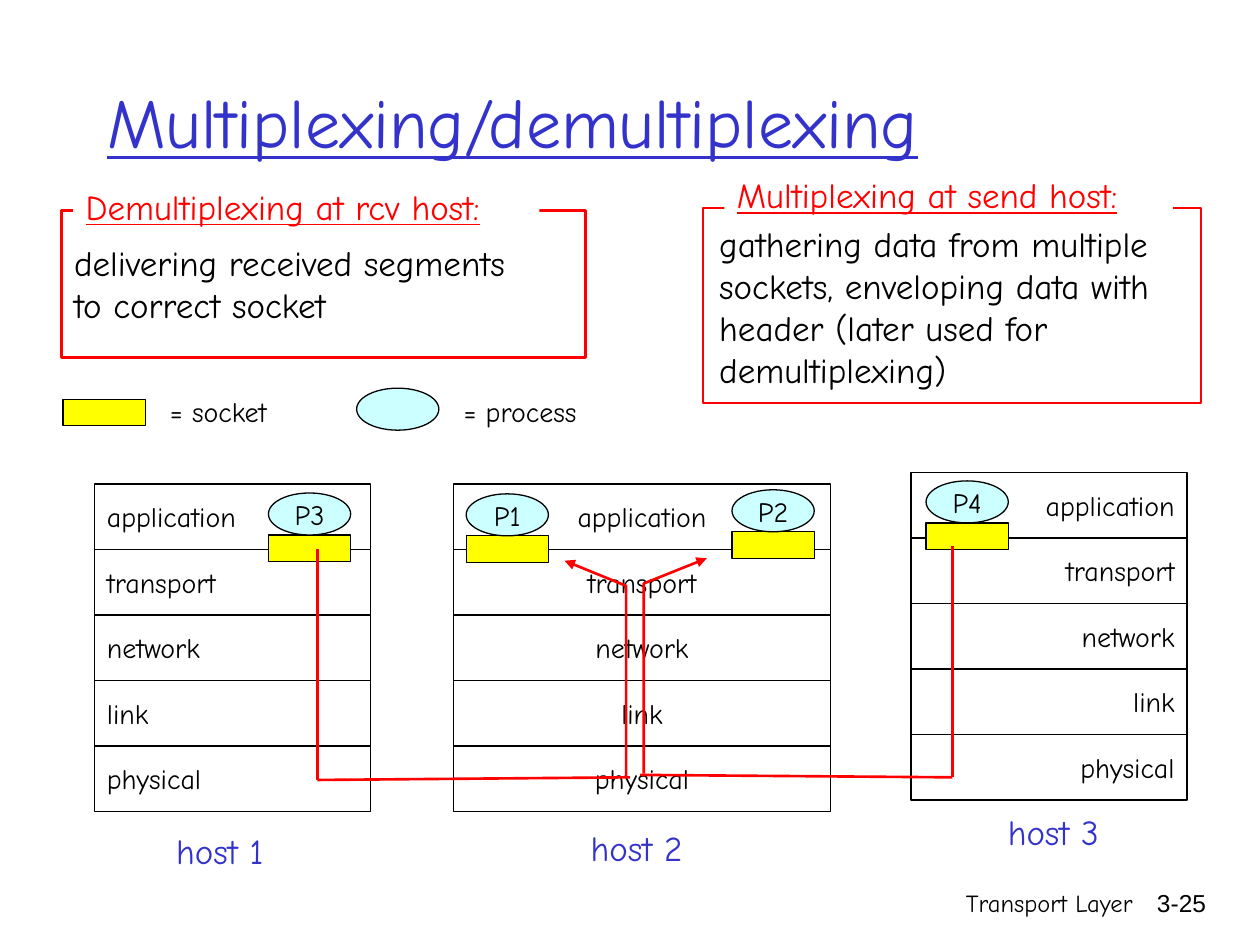
"""Build the multiplexing/demultiplexing slide with its three protocol stacks."""
from lxml import etree
from pptx import Presentation
from pptx.dml.color import RGBColor
from pptx.enum.shapes import MSO_CONNECTOR, MSO_SHAPE
from pptx.enum.text import MSO_ANCHOR, PP_ALIGN
from pptx.oxml.ns import qn
from pptx.util import Pt

RECT, OVAL, STRAIGHT = MSO_SHAPE.RECTANGLE, MSO_SHAPE.OVAL, MSO_CONNECTOR.STRAIGHT
LEFT, CENTER, RIGHT = PP_ALIGN.LEFT, PP_ALIGN.CENTER, PP_ALIGN.RIGHT
TOP, MIDDLE = MSO_ANCHOR.TOP, MSO_ANCHOR.MIDDLE

THEME = {
    "font": "Comic Neue", "number_font": "Arial",
    "ink": "000000", "paper": "FFFFFF", "blue": "3333CC", "red": "FF0000",
    "socket": "FFFF00", "process": "CCFFFF",
    "title": 40, "body": 20, "label": 16, "footer": 14,
    "thin": 0.75, "thick": 1.5,
}

TITLE = ("Multiplexing/demultiplexing", (54, 24, 612, 90))
LAYERS = ["application", "transport", "network", "link", "physical"]
ROW_HEIGHT = 37.44
HOSTS = [
    {"left": 54, "top": 276.5, "width": 157.7, "align": LEFT,
     "caption": ("host 1", (93.6, 470.2, 70.6, 31))},
    {"left": 520.6, "top": 270, "width": 157.7, "align": RIGHT,
     "caption": ("host 3", (568.8, 459.4, 74.2, 31))},
    {"left": 259.2, "top": 276.5, "width": 215.3, "align": CENTER,
     "caption": ("host 2", (330.5, 468.7, 74.2, 31))},
]
SOCKET_SIZE, PROCESS_SIZE = (47, 15.1), (47, 24)
PROCESSES = [("P2", 418.3, 303.9), ("P3", 153.4, 305.7),
             ("P4", 529.2, 298.8), ("P1", 266.4, 306.2)]
LEGEND_SOCKET, LEGEND_PROCESS = (36, 228.2), (203.8, 221.8)
LEGEND_TEXT = [("= socket", (90, 221.8, 76.3, 26.6)),
               ("= process", (257.8, 221.8, 84.2, 26.6))]
DEFINITIONS = [
    {"heading": "Demultiplexing at rcv host:",
     "heading_box": (41.8, 102.2, 266.4, 31), "frame": (35.3, 120.2, 299.5, 84.2),
     "lines": ["delivering received segments", "to correct socket"],
     "text_box": (35.3, 120.2, 299.5, 84.2), "anchor": MIDDLE},
    {"heading": "Multiplexing at send host:",
     "heading_box": (414, 95.8, 256.3, 31), "frame": (401.8, 118.8, 284.4, 111.6),
     "lines": ["gathering data from multiple", "sockets, enveloping data with",
               "header (later used for", "demultiplexing)"],
     "text_box": (403.9, 123.8, 293, 103), "anchor": TOP},
]
ROUTES = [
    {"down": [(181.4, 313.9), (181.4, 445.7)], "across": [(181.4, 445.7), (360, 444.2)],
     "up": [(357.8, 444.2), (357.8, 334.8), (322.6, 320.4)]},
    {"down": [(544.3, 311.8), (544.3, 444.2)], "across": [(544.3, 444.2), (365.8, 442.8)],
     "up": [(367.9, 442.1), (367.9, 333.4), (403.9, 319)]},
]
FOOTERS = [("Transport Layer", (426.2, 504, 228.2, 36), "font"),
           ("3-25", (643, 504, 53.3, 36), "number_font")]


def color(name):
    return RGBColor.from_string(THEME[name])


def points(values):
    return [Pt(value) for value in values]


def write(holder, lines, size, ink="ink", align=LEFT, anchor=TOP, font="font", underline=None):
    frame = holder.text_frame
    frame.word_wrap = True
    frame.vertical_anchor = anchor
    frame.text = "\n".join(lines)
    for paragraph in frame.paragraphs:
        paragraph.alignment = align
        paragraph.font.name = THEME[font]
        paragraph.font.size = Pt(THEME[size])
        paragraph.font.color.rgb = color(ink)
        paragraph.font.underline = underline
    return frame


def add_text(slide, lines, box, size, **style):
    write(slide.shapes.add_textbox(*points(box)), lines, size, **style)


def add_box(slide, kind, box, fill=None, line="ink", weight="thin"):
    box_shape = slide.shapes.add_shape(kind, *points(box))
    box_shape.shadow.inherit = False
    if fill:
        box_shape.fill.solid()
        box_shape.fill.fore_color.rgb = color(fill)
    else:
        box_shape.fill.background()
    if line:
        box_shape.line.color.rgb = color(line)
        box_shape.line.width = Pt(THEME[weight])
    else:
        box_shape.line.fill.background()
    return box_shape


def add_process(slide, left, top, name=None):
    process = add_box(slide, OVAL, (left, top, *PROCESS_SIZE), "process")
    if name:
        frame = write(process, [name], "label", align=CENTER, anchor=MIDDLE)
        frame.margin_left = frame.margin_right = frame.margin_top = frame.margin_bottom = 0


def add_host(slide, host):
    for index, layer in enumerate(LAYERS):
        box = (host["left"], host["top"] + index * ROW_HEIGHT, host["width"], ROW_HEIGHT)
        write(add_box(slide, RECT, box, "paper"), [layer], "label",
              align=host["align"], anchor=MIDDLE)
    caption, box = host["caption"]
    add_text(slide, [caption], box, "body", ink="blue")


def add_route(slide, route):
    for start, end in (route["down"], route["across"]):
        segment = slide.shapes.add_connector(STRAIGHT, *points(start + end))
        segment.line.color.rgb = color("red")
        segment.line.width = Pt(THEME["thick"])
        etree.SubElement(segment._element.spPr, qn("a:effectLst"))
    start, *rest = [points(vertex) for vertex in route["up"]]
    builder = slide.shapes.build_freeform(*start)
    builder.add_line_segments(rest, close=False)
    arrow = builder.convert_to_shape()
    arrow.shadow.inherit = False
    arrow.fill.background()
    arrow.line.color.rgb = color("red")
    arrow.line.width = Pt(THEME["thick"])
    etree.SubElement(arrow.line._get_or_add_ln(), qn("a:tailEnd"), type="triangle")


def add_definition(slide, definition):
    add_box(slide, RECT, definition["frame"], line="red", weight="thick")
    heading = add_box(slide, RECT, definition["heading_box"], "paper", line=None)
    write(heading, [definition["heading"]], "body", ink="red", underline=True)
    add_text(slide, definition["lines"], definition["text_box"], "body",
             anchor=definition["anchor"])


def main():
    deck = Presentation()
    deck.slide_width, deck.slide_height = Pt(720), Pt(540)
    slide = deck.slides.add_slide(deck.slide_layouts[5])
    title = slide.shapes.title
    heading, box = TITLE
    title.left, title.top, title.width, title.height = points(box)
    write(title, [heading], "title", ink="blue", anchor=MIDDLE, underline=True)
    for words, box, font in FOOTERS:
        add_text(slide, [words], box, "footer", align=RIGHT, font=font)
    for host in HOSTS:
        add_host(slide, host)
    for name, left, socket_top in PROCESSES:
        add_box(slide, RECT, (left, socket_top, *SOCKET_SIZE), "socket")
        add_process(slide, left, socket_top - PROCESS_SIZE[1], name)
    add_box(slide, RECT, (*LEGEND_SOCKET, *SOCKET_SIZE), "socket")
    add_process(slide, *LEGEND_PROCESS)
    for words, box in LEGEND_TEXT:
        add_text(slide, [words], box, "label")
    for definition in DEFINITIONS:
        add_definition(slide, definition)
    for route in ROUTES:
        add_route(slide, route)
    deck.save("out.pptx")


if __name__ == "__main__":
    main()
